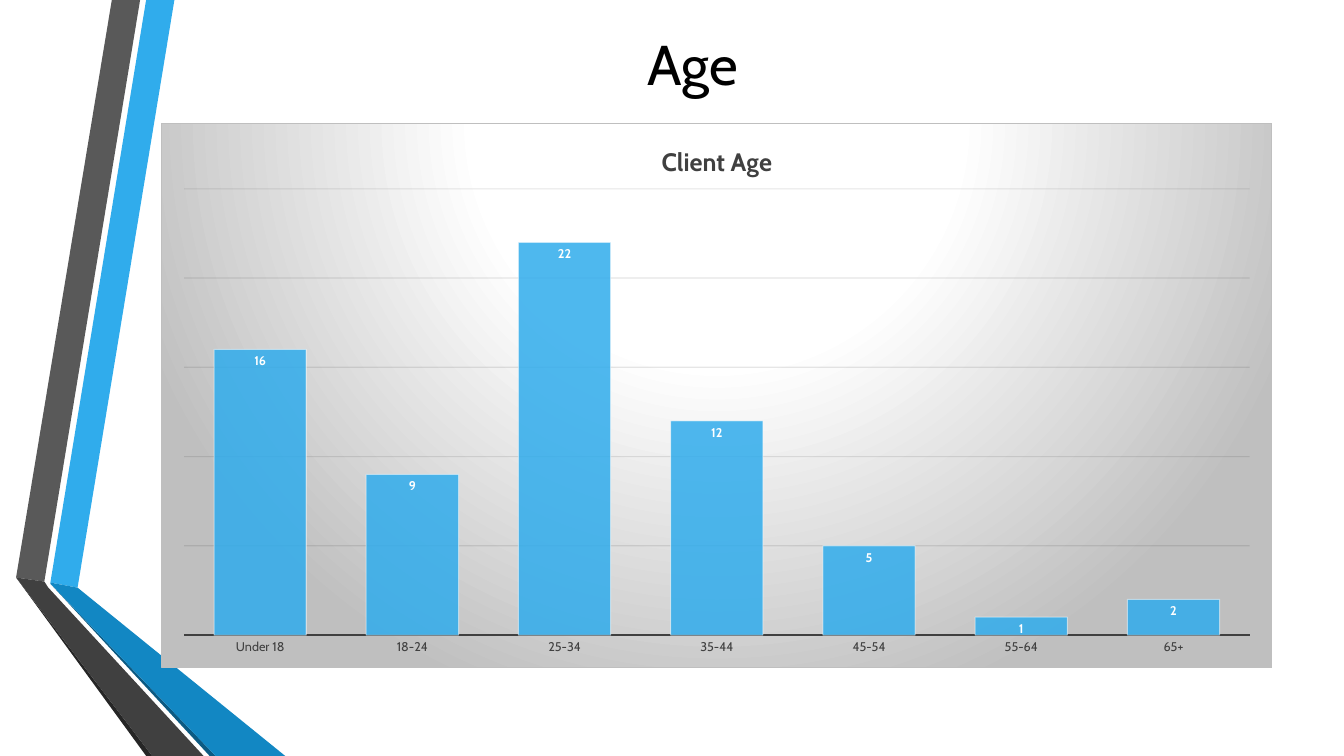
from dataclasses import dataclass

import lxml.etree
import pptx
import pptx.chart.chart
import pptx.chart.data
import pptx.dml.color
import pptx.dml.line
import pptx.enum.chart
import pptx.enum.text
import pptx.oxml
import pptx.oxml.ns
import pptx.slide
import pptx.text.text
import pptx.util

Inches = pptx.util.Inches
RGBColor = pptx.dml.color.RGBColor
BLACK = RGBColor(0x00, 0x00, 0x00)
WHITE = RGBColor(0xFF, 0xFF, 0xFF)
GRID = RGBColor(0x0D, 0x0D, 0x0D)
CHARCOAL = RGBColor(0x40, 0x40, 0x40)
GRAY = RGBColor(0x59, 0x59, 0x59)
DARK_GRAY = RGBColor(0x26, 0x26, 0x26)
SILVER = RGBColor(0xBF, 0xBF, 0xBF)
SKY = RGBColor(0x30, 0xAC, 0xEC)
BLUE = RGBColor(0x12, 0x87, 0xC3)
NAVY = RGBColor(0x0C, 0x5A, 0x82)
FONT = "Cabin"
NAMESPACES = pptx.oxml.ns.nsdecls("c", "a")


@dataclass(frozen=True)
class Ribbon:
    color: RGBColor
    points: tuple[tuple[float, float], ...]


RIBBONS = (
    Ribbon(SKY, ((0.5, 5.78), (0.77, 5.83), (1.73, 0), (1.45, 0))),
    Ribbon(GRAY, ((1.39, 0), (1.11, 0), (0.16, 5.73), (0.44, 5.77))),
    Ribbon(DARK_GRAY, ((0.16, 5.73), (1.45, 7.5), (1.51, 7.5))),
    Ribbon(NAVY, ((0.5, 5.79), (2.08, 7.5), (2.14, 7.5))),
    Ribbon(BLUE, ((0.5, 5.79), (2.14, 7.5), (2.83, 7.5), (0.77, 5.83), (0.5, 5.78))),
    Ribbon(CHARCOAL, ((2.02, 7.5), (0.48, 5.83), (0.44, 5.77), (0.16, 5.73), (1.51, 7.5))),
)

AGE_GROUPS = {"Under 18": 16, "18-24": 9, "25-34": 22, "35-44": 12,
              "45-54": 5, "55-64": 1, "65+": 2}


def set_values(target: object, values: dict[str, object]) -> None:
    for name, value in values.items():
        setattr(target, name, value)


def format_font(font: pptx.text.text.Font, size: float, color: RGBColor, bold: bool = False) -> None:
    set_values(font, {"name": FONT, "size": pptx.util.Pt(size), "bold": bold})
    font.color.rgb = color


def format_line(line: pptx.dml.line.LineFormat, color: RGBColor, width: float) -> None:
    line.color.rgb = color
    line.width = pptx.util.Pt(width)


def set_opacity(chart: pptx.chart.chart.Chart, color_owner: str, percent: int) -> None:
    """Make the solid colour of the chart part at the given XPath partly transparent."""
    color = chart.element.xpath(f".//{color_owner}/a:solidFill/a:srgbClr")[0]
    alpha = lxml.etree.SubElement(color, pptx.oxml.ns.qn("a:alpha"))
    alpha.set("val", str(percent * 1000))


def draw_ribbon(slide: pptx.slide.Slide, ribbon: Ribbon) -> None:
    corners = [(Inches(x), Inches(y)) for x, y in ribbon.points]
    builder = slide.shapes.build_freeform(*corners[0])
    builder.add_line_segments(corners[1:], close=True)
    shape = builder.convert_to_shape()
    shape.shadow.inherit = False
    shape.fill.solid()
    shape.fill.fore_color.rgb = ribbon.color
    shape.line.fill.background()


def place_title(slide: pptx.slide.Slide) -> None:
    """Fill the title placeholder and bring it in front of the ribbons."""
    title = slide.shapes.title
    set_values(title, {"left": Inches(1.13), "top": Inches(0.04),
                       "width": Inches(11.49), "height": Inches(1.18)})
    title.text_frame.text = "Age"
    title.text_frame.vertical_anchor = pptx.enum.text.MSO_ANCHOR.MIDDLE
    paragraph = title.text_frame.paragraphs[0]
    paragraph.alignment = pptx.enum.text.PP_ALIGN.CENTER
    format_font(paragraph.runs[0].font, 40, BLACK)
    slide.shapes.element.append(title.element)


def fill_chart_area(chart: pptx.chart.chart.Chart) -> None:
    """Give the chart its radial gradient and border."""
    stops = "".join(
        f'<a:gs pos="{position * 1000}"><a:srgbClr val="{color}"/></a:gs>'
        for position, color in ((0, WHITE), (39, WHITE), (100, SILVER)))
    area = pptx.oxml.parse_xml(
        f'<c:spPr {NAMESPACES}><a:gradFill><a:gsLst>{stops}</a:gsLst>'
        '<a:path path="circle"><a:fillToRect l="50000" t="-80000" r="50000" b="180000"/></a:path>'
        f'</a:gradFill><a:ln w="9525"><a:solidFill><a:srgbClr val="{SILVER}"/></a:solidFill></a:ln>'
        '</c:spPr>')
    chart.element.find(pptx.oxml.ns.qn("c:chart")).addnext(area)


def place_plot(chart: pptx.chart.chart.Chart) -> None:
    places = "".join(f'<c:{name} val="{value}"/>' for name, value in
                     (("x", 0.02), ("y", 0.12), ("w", 0.96), ("h", 0.82)))
    layout = pptx.oxml.parse_xml(
        f'<c:layout {NAMESPACES}><c:manualLayout><c:layoutTarget val="inner"/>'
        f'<c:xMode val="edge"/><c:yMode val="edge"/>{places}</c:manualLayout></c:layout>')
    plot_area = chart.element.xpath("c:chart/c:plotArea")[0]
    for old_layout in plot_area.findall(pptx.oxml.ns.qn("c:layout")):
        plot_area.remove(old_layout)
    plot_area.insert(0, layout)


def format_axes(chart: pptx.chart.chart.Chart) -> None:
    no_tick = pptx.enum.chart.XL_TICK_MARK.NONE
    set_values(chart.category_axis, {"major_tick_mark": no_tick, "minor_tick_mark": no_tick})
    format_font(chart.category_axis.tick_labels.font, 9, CHARCOAL)
    format_line(chart.category_axis.format.line, CHARCOAL, 1.5)

    value_axis = chart.value_axis
    set_values(value_axis, {"visible": False, "minimum_scale": 0, "maximum_scale": 25,
                            "major_unit": 5, "has_major_gridlines": True})
    format_line(value_axis.major_gridlines.format.line, GRID, 0.75)
    set_opacity(chart, "c:majorGridlines/c:spPr/a:ln", 10)


def format_columns(chart: pptx.chart.chart.Chart) -> None:
    plot = chart.plots[0]
    set_values(plot, {"gap_width": 65, "vary_by_categories": False})
    series = plot.series[0]
    series.format.fill.solid()
    series.format.fill.fore_color.rgb = SKY
    format_line(series.format.line, WHITE, 0.75)
    set_opacity(chart, "c:ser/c:spPr", 85)
    set_opacity(chart, "c:ser/c:spPr/a:ln", 50)

    labels = series.data_labels
    set_values(labels, {"show_value": True,
                        "position": pptx.enum.chart.XL_LABEL_POSITION.INSIDE_END})
    format_font(labels.font, 9, WHITE, bold=True)


def add_age_chart(slide: pptx.slide.Slide) -> None:
    data = pptx.chart.data.CategoryChartData()
    data.categories = list(AGE_GROUPS)
    data.add_series("Series 1", list(AGE_GROUPS.values()))
    chart = slide.shapes.add_chart(
        pptx.enum.chart.XL_CHART_TYPE.COLUMN_CLUSTERED,
        Inches(1.6), Inches(1.22), Inches(11.02), Inches(5.41), data).chart
    set_values(chart, {"has_legend": False, "has_title": True})
    format_font(chart.font, 10, BLACK)
    title_frame = chart.chart_title.text_frame
    title_frame.text = "Client Age"
    format_font(title_frame.paragraphs[0].runs[0].font, 18, CHARCOAL, bold=True)
    format_axes(chart)
    format_columns(chart)
    fill_chart_area(chart)
    place_plot(chart)


def main() -> None:
    presentation = pptx.Presentation()
    set_values(presentation, {"slide_width": Inches(13.33), "slide_height": Inches(7.5)})
    title_only = presentation.slide_layouts[5]
    slide = presentation.slides.add_slide(title_only)
    for ribbon in RIBBONS:
        draw_ribbon(slide, ribbon)
    place_title(slide)
    add_age_chart(slide)
    presentation.save("out.pptx")


if __name__ == "__main__":
    main()
